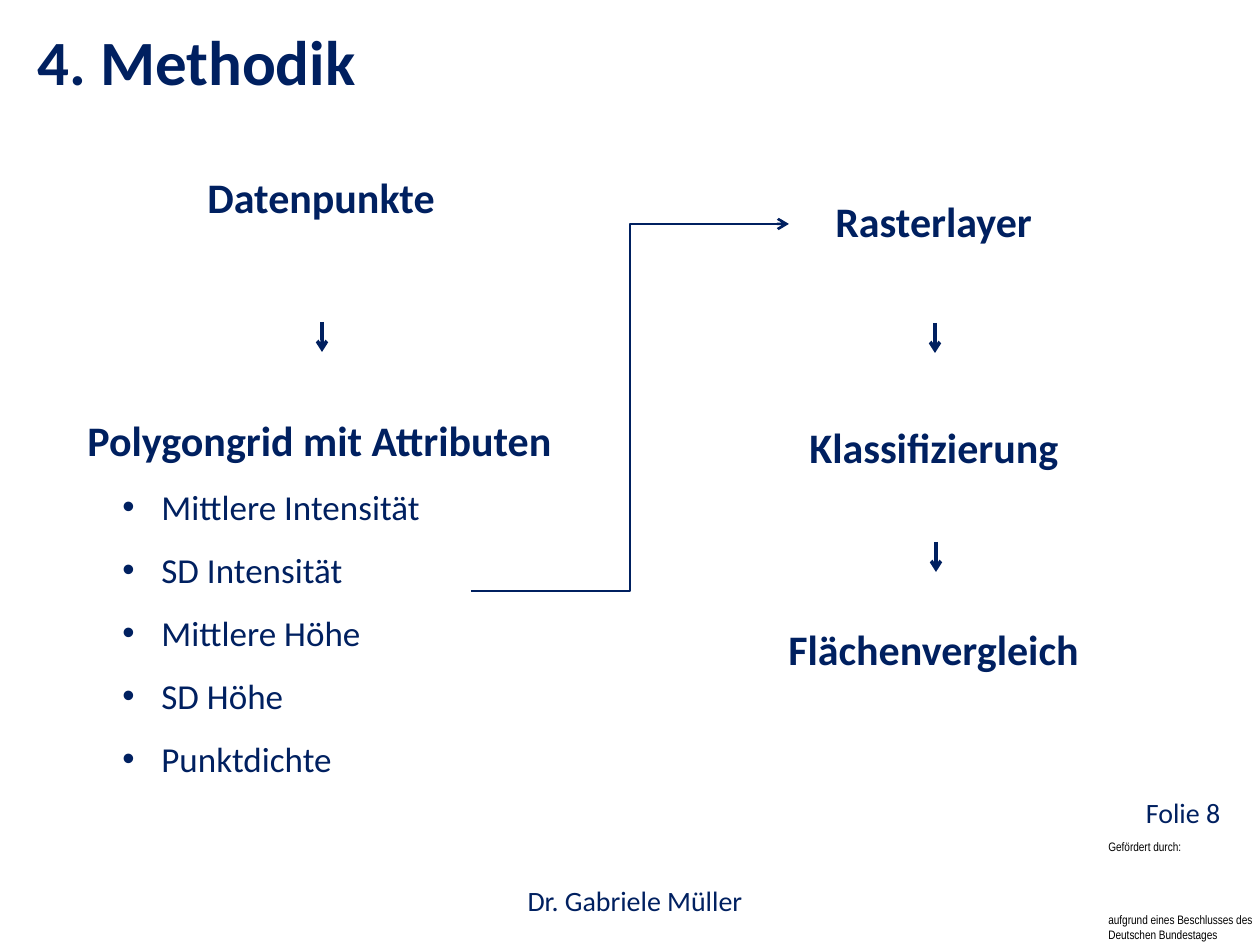
import pptx
import pptx.dml.color
import pptx.enum.shapes
import pptx.enum.text
import pptx.oxml.ns
import pptx.util
from lxml import etree

PX = 914400 / 126
NAVY = "002060"
CONNECTOR = pptx.enum.shapes.MSO_CONNECTOR
CENTER = pptx.enum.text.PP_ALIGN.CENTER
qn = pptx.oxml.ns.qn


def px(length):
    return pptx.util.Emu(round(length * PX))


def color(hex_string):
    return pptx.dml.color.RGBColor.from_string(hex_string)


presentation = pptx.Presentation()
presentation.slide_width = px(1260)
presentation.slide_height = px(945)
slide = presentation.slides.add_slide(presentation.slide_layouts[6])


def add_text(text, left, top, width, height, size=24, font="Calibri", fill=NAVY,
             bold=False, wrap=True, align=None, inset=None, bullets=()):
    """Add a text box: one heading line, then optional 20 pt bullet lines."""
    box = slide.shapes.add_textbox(px(left), px(top), px(width), px(height))
    frame = box.text_frame
    frame.word_wrap = wrap
    if inset is not None:
        frame.margin_left = frame.margin_right = px(inset)
        frame.margin_top = frame.margin_bottom = px(inset)
    for index, line in enumerate([text, *bullets]):
        paragraph = frame.paragraphs[0] if index == 0 else frame.add_paragraph()
        if index:
            paragraph.level = 1
            paragraph.line_spacing = 1.5
            properties = paragraph._p.get_or_add_pPr()
            properties.set("marL", str(px(74)))
            properties.set("indent", str(-px(39)))
            etree.SubElement(properties, qn("a:buFont"), typeface="Arial")
            etree.SubElement(properties, qn("a:buChar"), char="•")
        elif align is not None:
            paragraph.alignment = align
        run = paragraph.add_run()
        run.text = line
        run.font.name = font
        run.font.size = pptx.util.Pt(20 if index else size)
        run.font.bold = bold and index == 0
        run.font.color.rgb = color(fill)


# Footer
add_text("Gefördert durch:", 1096, 833, 179, 28, size=7, font="Arial Narrow", fill="000000")
add_text("aufgrund eines Beschlusses des Deutschen Bundestages", 1096, 906, 218, 43,
         size=7, font="Arial Narrow", fill="000000")
add_text("Dr. Gabriele Müller", 164, 877, 942, 42, size=16, align=CENTER)
add_text("Folie 8", 1146, 796, 115, 34, size=16, inset=0)

# Title and workflow steps
add_text("4. Methodik", 25, 16, 1022, 90, size=36, bold=True)
add_text("Polygongrid mit Attributen", 75, 408, 495, 382, bold=True, wrap=False,
         bullets=["Mittlere Intensität", "SD Intensität", "Mittlere Höhe", "SD Höhe",
                  "Punktdichte"])
for step, left, top, width in [
    ("Datenpunkte", 195, 165, 256),
    ("Rasterlayer", 823, 189, 224),
    ("Klassifizierung", 797, 415, 277),
    ("Flächenvergleich", 776, 617, 319),
]:
    add_text(step, left, top, width, 63, bold=True, wrap=False)

# Arrows between the steps
for kind, start_x, start_y, end_x, end_y, weight in [
    (CONNECTOR.STRAIGHT, 322, 322, 322, 352, 2),
    (CONNECTOR.STRAIGHT, 935, 323, 935, 353, 2),
    (CONNECTOR.STRAIGHT, 936, 542, 936, 572, 2),
    (CONNECTOR.ELBOW, 471, 591, 789, 224, 1.5),
]:
    arrow = slide.shapes.add_connector(kind, px(start_x), px(start_y), px(end_x), px(end_y))
    arrow.line.color.rgb = color(NAVY)
    arrow.line.width = pptx.util.Pt(weight)
    etree.SubElement(arrow.line._get_or_add_ln(), qn("a:tailEnd"), type="arrow")
    etree.SubElement(arrow._element.spPr, qn("a:effectLst"))

presentation.save("out.pptx")
